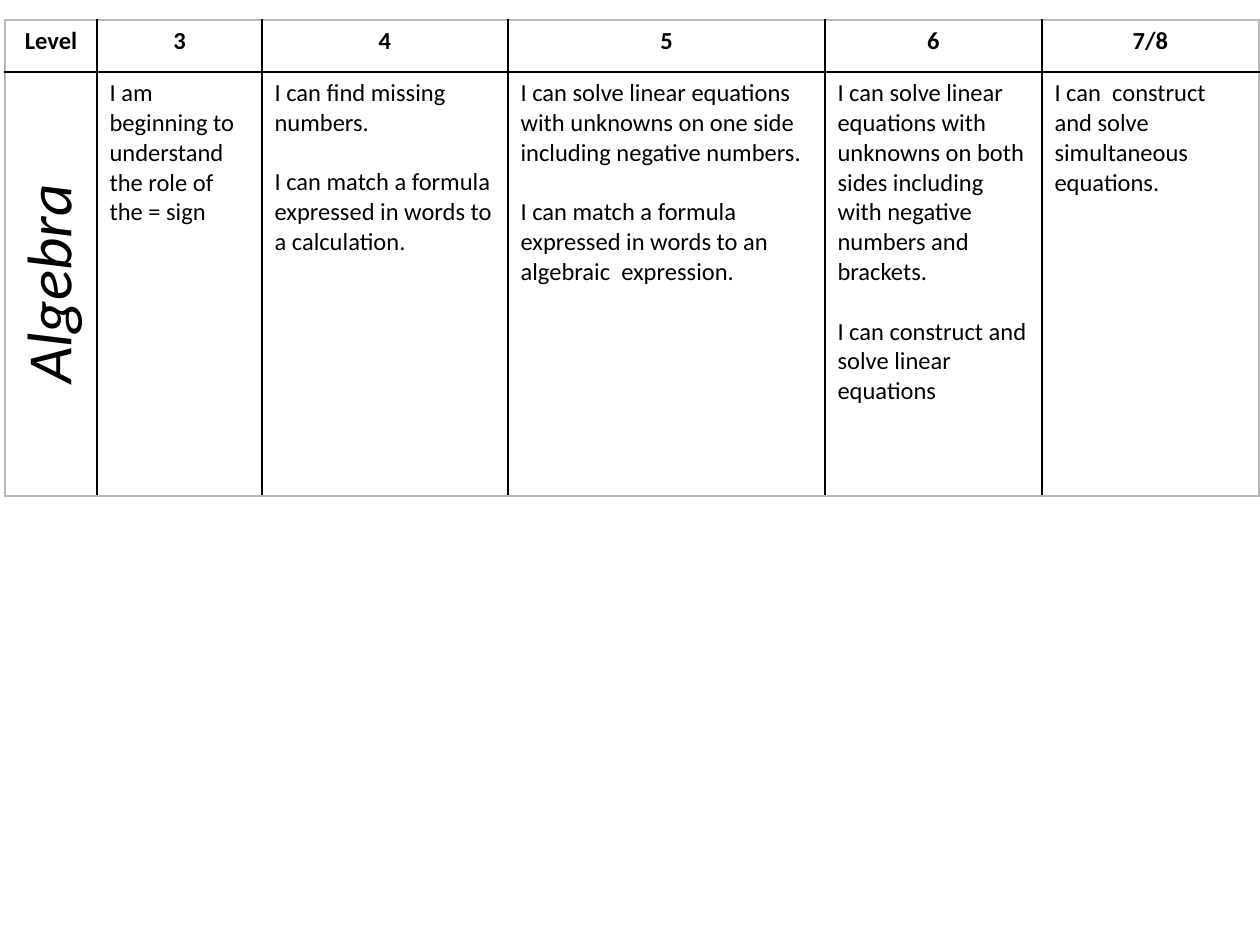
import pptx
import pptx.util
import pptx.dml.color
import pptx.enum.text
import pptx.oxml.ns
from lxml import etree

COLORS = {"text": "000000", "inner": "000000", "outer": "B9B9B9"}
FONT = "Calibri"
PAGE_WIDTH, PAGE_HEIGHT = 1260, 945
TABLE_LEFT, TABLE_TOP = 5, 20
ROW_HEIGHTS = [52, 424]
TOPIC = "Algebra"
LEVELS = [  # level, column width, statements
    ("Level", 92, [TOPIC]),
    ("3", 165, ["I am beginning to understand the role of the = sign"]),
    ("4", 246, ["I can find missing numbers.",
                "I can match a formula expressed in words to a calculation."]),
    ("5", 317, ["I can solve linear equations with unknowns on one side "
                "including negative numbers.",
                "I can match a formula expressed in words to an "
                "algebraic  expression."]),
    ("6", 217, ["I can solve linear equations with unknowns on both sides "
                "including with negative numbers and brackets.",
                "I can construct and solve linear equations"]),
    ("7/8", 217, ["I can  construct and solve simultaneous equations."]),
]


def px(length):
    return pptx.util.Emu(length * 914400 // 126)


def write(cell, texts, size=14, bold=False, italic=False, centered=False):
    frame = cell.text_frame
    for index, text in enumerate(texts):
        para = frame.add_paragraph() if index else frame.paragraphs[0]
        para.text = text
        if index:
            para.space_before = pptx.util.Pt(17)
        if centered:
            para.alignment = pptx.enum.text.PP_ALIGN.CENTER
        font = para.font
        font.name, font.size = FONT, pptx.util.Pt(size)
        font.bold, font.italic = bold, italic
        font.color.rgb = pptx.dml.color.RGBColor.from_string(COLORS["text"])


def set_borders(cell, edges):
    """Draw the cell's sides; edges maps each side to whether it is outer."""
    qn = pptx.oxml.ns.qn
    properties = cell._tc.get_or_add_tcPr()
    for index, (side, is_outer) in enumerate(edges.items()):
        line = etree.Element(qn("a:ln" + side), w=str(pptx.util.Pt(1)))
        fill = etree.SubElement(line, qn("a:solidFill"))
        color = COLORS["outer" if is_outer else "inner"]
        etree.SubElement(fill, qn("a:srgbClr"), val=color)
        properties.insert(index, line)


def main():
    deck = pptx.Presentation()
    deck.slide_width, deck.slide_height = px(PAGE_WIDTH), px(PAGE_HEIGHT)
    page = deck.slides.add_slide(deck.slide_layouts[6])
    widths = [width for _, width, _ in LEVELS]
    table = page.shapes.add_table(
        len(ROW_HEIGHTS), len(LEVELS), px(TABLE_LEFT), px(TABLE_TOP),
        px(sum(widths)), px(sum(ROW_HEIGHTS))).table
    table.first_row = table.horz_banding = False
    for row, height in zip(table.rows, ROW_HEIGHTS):
        row.height = px(height)

    last_row, last_column = len(ROW_HEIGHTS) - 1, len(LEVELS) - 1
    for column, (level, width, statements) in enumerate(LEVELS):
        table.columns[column].width = px(width)
        write(table.cell(0, column), [level], bold=True, centered=True)
        body = table.cell(1, column)
        if column == 0:
            write(body, statements, size=36, italic=True, centered=True)
            body._tc.get_or_add_tcPr().set("vert", "vert270")
        else:
            write(body, statements)
        for row in range(len(ROW_HEIGHTS)):
            cell = table.cell(row, column)
            cell.fill.background()
            set_borders(cell, {"L": column == 0, "R": column == last_column,
                               "T": row == 0, "B": row == last_row})
    deck.save("out.pptx")


if __name__ == "__main__":
    main()
